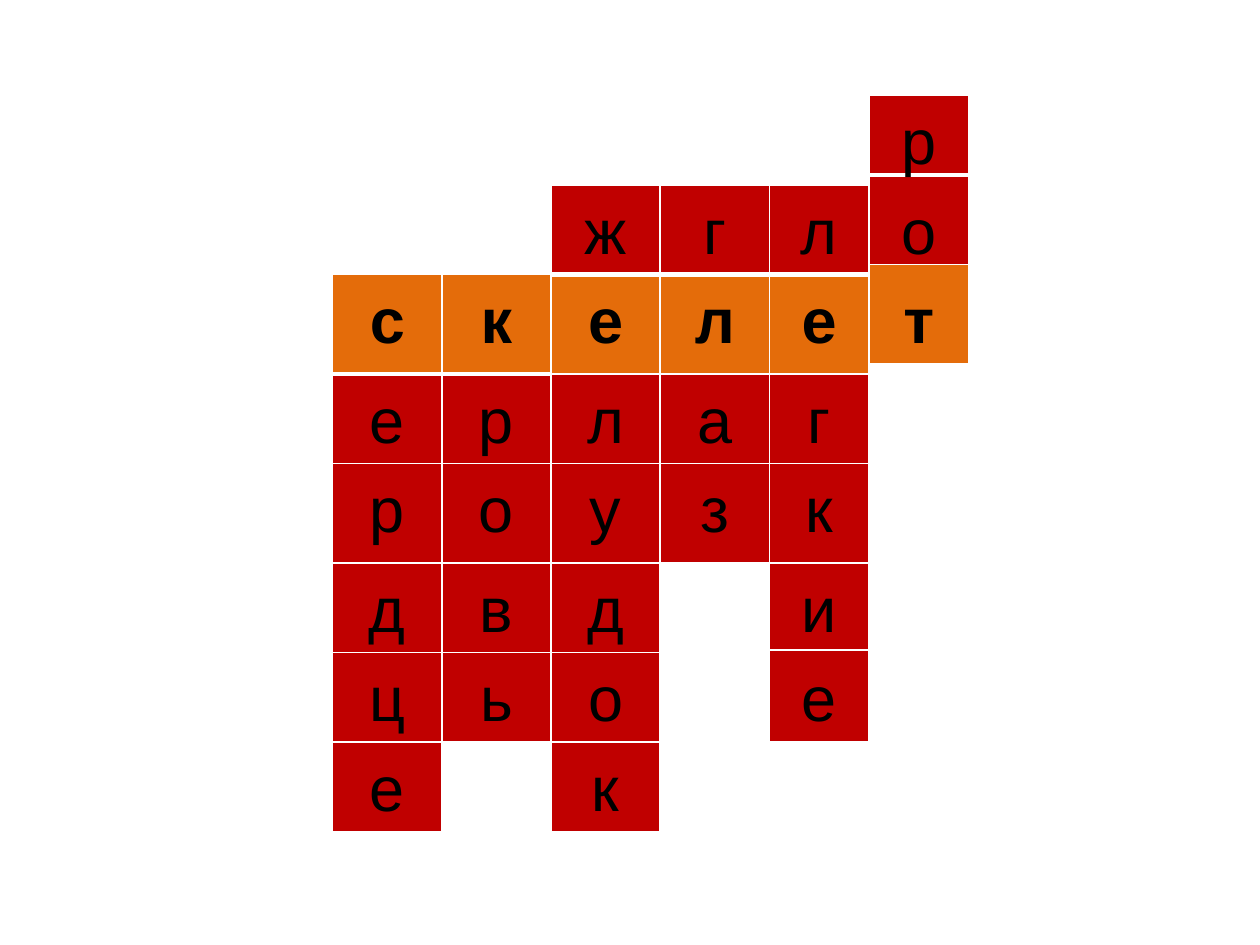
from itertools import accumulate

from lxml.etree import SubElement
from pptx import Presentation
from pptx.dml.color import RGBColor
from pptx.enum.text import MSO_AUTO_SIZE as AutoSize, PP_ALIGN as Align
from pptx.oxml.ns import qn
from pptx.util import Inches, Pt

RED = RGBColor(0xC0, 0x00, 0x00)
ORANGE = RGBColor(0xE4, 0x6C, 0x0A)
BLACK = RGBColor(0x00, 0x00, 0x00)
WHITE = RGBColor(0xFF, 0xFF, 0xFF)

COLUMN_WIDTHS = [2.6 / 3] * 4 + [0.79] * 2
ROW_HEIGHTS = [0.71, 0.71, 0.79, 0.71, 0.79, 0.71, 0.71, 0.71]
COLUMN_LEFTS = list(accumulate(COLUMN_WIDTHS, initial=2.64))
ROW_TOPS = list(accumulate(ROW_HEIGHTS, initial=0.76))
LETTER_HEIGHT = 0.71
KEY_ROW = 2

# Each word: its first grid row, and the table rows that differ from the grid.
WORDS = [
    ("сердце", 2, {}),
    ("кровь", 2, {}),
    ("желудок", 1, {}),
    ("глаз", 1, {}),
    ("легкие", 1, {4: 0.69, 5: 0.73}),
    ("рот", 0, {0: 0.63}),
]


def write_text(frame, text, *, size, font, color, bold=False, align=Align.CENTER):
    paragraph = frame.paragraphs[0]
    paragraph.alignment = align
    run = paragraph.add_run()
    run.text = text
    run.font.size = Pt(size)
    run.font.name = font
    run.font.bold = bold
    run.font.color.rgb = color


def set_border(cell, side, width):
    properties = cell._tc.get_or_add_tcPr()
    line = SubElement(properties, qn(f"a:ln{side}"), w=str(Pt(width)))
    fill = SubElement(line, qn("a:solidFill"))
    SubElement(fill, qn("a:srgbClr"), val=str(WHITE))


class Crossword:
    """Draws vertical words on the shared letter grid of one slide."""

    font = "Arial"
    size = 36
    thin, thick = 1, 3

    def __init__(self, slide):
        self.slide = slide

    def add_cells(self, column, first_row, heights):
        shape = self.slide.shapes.add_table(
            len(heights), 1,
            Inches(COLUMN_LEFTS[column]), Inches(ROW_TOPS[first_row]),
            Inches(COLUMN_WIDTHS[column]), Inches(sum(heights)))
        table = shape.table
        for index, height in enumerate(heights):
            table.rows[index].height = Inches(height)
            cell = table.cell(index, 0)
            top = self.thick if index == 1 else self.thin
            bottom = self.thick if index == 0 else self.thin
            for side, width in zip("LRTB", (self.thin, self.thin, top, bottom)):
                set_border(cell, side, width)
            cell.fill.solid()
            cell.fill.fore_color.rgb = ORANGE if first_row + index == KEY_ROW else RED

    def add_letter(self, column, row, letter):
        box = self.slide.shapes.add_textbox(
            Inches(COLUMN_LEFTS[column]), Inches(ROW_TOPS[row]),
            Inches(COLUMN_WIDTHS[column]), Inches(LETTER_HEIGHT))
        frame = box.text_frame
        frame.word_wrap = True
        frame.auto_size = AutoSize.SHAPE_TO_FIT_TEXT
        write_text(frame, letter, size=self.size, font=self.font,
                   color=BLACK, bold=row == KEY_ROW)


def main():
    presentation = Presentation()
    presentation.slide_width = Inches(10)
    presentation.slide_height = Inches(7.5)
    crossword = Crossword(presentation.slides.add_slide(presentation.slide_layouts[6]))

    for column, (word, first_row, exceptions) in enumerate(WORDS):
        grid_heights = ROW_HEIGHTS[first_row:first_row + len(word)]
        heights = [exceptions.get(i, height) for i, height in enumerate(grid_heights)]
        crossword.add_cells(column, first_row, heights)
    for column, (word, first_row, _) in enumerate(WORDS):
        for row, letter in enumerate(word, start=first_row):
            crossword.add_letter(column, row, letter)

    presentation.save("out.pptx")


if __name__ == "__main__":
    main()
